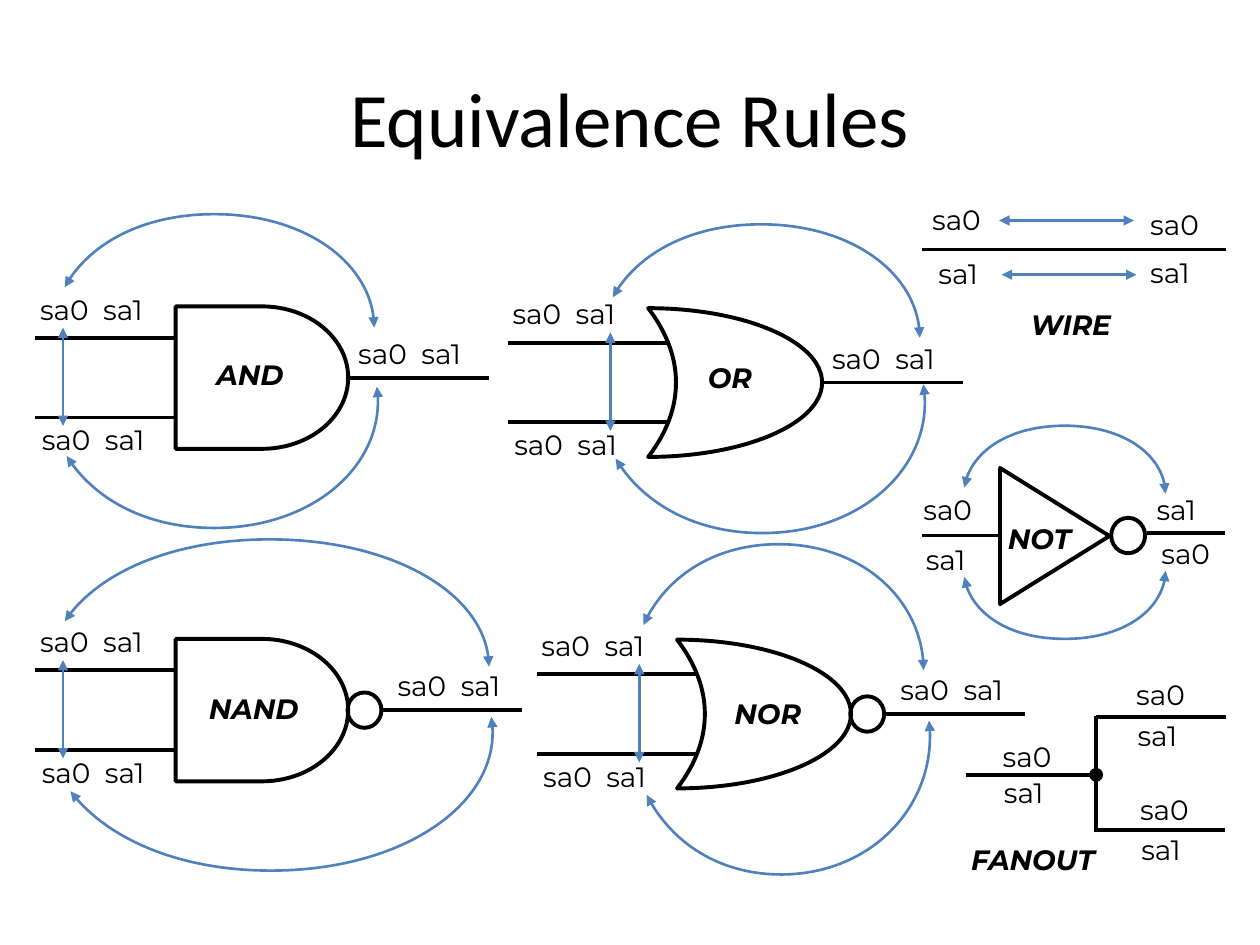
from dataclasses import dataclass
from math import asin, cos, pi, sin, tan

from lxml import etree
from pptx import Presentation
from pptx.dml.color import RGBColor
from pptx.enum.shapes import MSO_CONNECTOR, MSO_SHAPE
from pptx.enum.text import MSO_ANCHOR, MSO_AUTO_SIZE, PP_ALIGN
from pptx.oxml.ns import qn
from pptx.util import Pt

STRAIGHT = MSO_CONNECTOR.STRAIGHT
DELAY = MSO_SHAPE.FLOWCHART_DELAY
MOON = MSO_SHAPE.MOON
OVAL = MSO_SHAPE.OVAL
TRIANGLE = MSO_SHAPE.ISOSCELES_TRIANGLE
LEFT = PP_ALIGN.LEFT
CENTER = PP_ALIGN.CENTER
MIDDLE = MSO_ANCHOR.MIDDLE
TOP = MSO_ANCHOR.TOP
GROW = MSO_AUTO_SIZE.SHAPE_TO_FIT_TEXT
FIXED = MSO_AUTO_SIZE.NONE


@dataclass(frozen=True)
class Theme:
    ink: RGBColor = RGBColor(0, 0, 0)
    accent: RGBColor = RGBColor(0x4F, 0x81, 0xBD)
    title_font: str = "Calibri"
    label_font: str = "Montserrat"
    title_size: float = 44
    label_size: float = 16
    wire_width: float = 2.25
    arrow_width: float = 1.5
    dot_width: float = 0.75


theme = Theme()
deck = Presentation()
deck.slide_width, deck.slide_height = Pt(720), Pt(540)
page = deck.slides.add_slide(deck.slide_layouts[6])


def add_text(text, left, top, width, height=26.6, *, font=theme.label_font,
             size=theme.label_size, bold=False, align=LEFT, anchor=TOP,
             wrap=False, fit=GROW):
    box = page.shapes.add_textbox(Pt(left), Pt(top), Pt(width), Pt(height))
    frame = box.text_frame
    frame.word_wrap = wrap
    frame.auto_size = fit
    frame.vertical_anchor = anchor
    para = frame.paragraphs[0]
    para.alignment = align
    span = para.add_run()
    span.text = text
    span.font.name = font
    span.font.size = Pt(size)
    span.font.bold = span.font.italic = bold
    span.font.color.rgb = theme.ink


def style_outline(shape, color, width, arrows=False):
    shape.line.color.rgb = color
    shape.line.width = Pt(width)
    properties = shape._element.spPr
    if arrows:
        for end in ("a:headEnd", "a:tailEnd"):
            etree.SubElement(properties.find(qn("a:ln")), qn(end), type="triangle")
    etree.SubElement(properties, qn("a:effectLst"))


add_text("Equivalence Rules", 36, 21.6, 648, 90, font=theme.title_font,
         size=theme.title_size, align=CENTER, anchor=MIDDLE, wrap=True, fit=FIXED)

bubble_width, bubble_height = 19.4, 20.2
wires = [
    (527, 142.6, 700.6, 142.6),
    (655.2, 304.6, 699.8, 304.6),
    (527, 306, 571, 306),
    (552.2, 442.8, 626.4, 442.8),
    (626.4, 409.7, 700.6, 409.7),
    (625.7, 474.5, 699.8, 474.5),
    (626.4, 409, 626.4, 475.2),
]
arrows = [(571, 126, 648, 126), (572.4, 157, 649.4, 157)]
bodies = [(TRIANGLE, 563.8, 275, 77.8, 62.6)]
bubbles = [(635, 295.9)]

gates = [
    (DELAY, 20.2, 193, False),
    (DELAY, 20.2, 383, True),
    (MOON, 290.2, 195.8, False),
    (MOON, 306.7, 385.2, True),
]
for preset, left, top, inverted in gates:
    if preset == DELAY:
        body_width, body_height, input_length, arrow_offset = 98.6, 81.4, 80.6, 15.8
    else:
        body_width, body_height, input_length, arrow_offset = 99.4, 85, 91.6, 58.6
    second, middle = top + 45.6, top + 22.8
    body_left = left + 80.2
    output = body_left + body_width
    bodies.append((preset, body_left, middle - body_height / 2, body_width, body_height))
    output_label = output - 1.4
    if inverted:
        bubbles.append((output - 0.4, middle - bubble_height / 2))
        output += bubble_width - 0.4
        output_label = output + 2.1
    wires += [
        (left, top, left + input_length, top),
        (left, second, left + input_length, second),
        (output, middle, output + 80.4, middle),
    ]
    arrows.append((left + arrow_offset, top - 5.8, left + arrow_offset, top + 50.4))
    for label_left, label_top in [
        (left - 4.4, top - 29.6),
        (left - 3.4, second - 0.6),
        (output_label, top - 4.4),
    ]:
        add_text("sa0  sa1", label_left, label_top, 87.1)

for lines, color, width, pointed in [
    (wires, theme.ink, theme.wire_width, False),
    (arrows, theme.accent, theme.arrow_width, True),
]:
    for ends in lines:
        line = page.shapes.add_connector(STRAIGHT, *map(Pt, ends))
        style_outline(line, color, width, pointed)

bodies += [(OVAL, *corner, bubble_width, bubble_height) for corner in bubbles]
for preset, *bounds in bodies:
    body = page.shapes.add_shape(preset, *map(Pt, bounds))
    body.fill.background()
    style_outline(body, theme.ink, theme.wire_width)
    if preset == MOON:
        body.adjustments[0] = 0.84
        body._element.spPr.find(qn("a:xfrm")).set("flipH", "1")
    if preset == TRIANGLE:
        body.rotation = 90

junction = page.shapes.add_shape(OVAL, Pt(622.8), Pt(439.2), Pt(7.2), Pt(7.2))
junction.fill.solid()
junction.fill.fore_color.rgb = theme.ink
style_outline(junction, theme.ink, theme.dot_width)

arcs = [
    (122.4, 187.2, 91.4, 64.8, 164.2, 187.2),
    (122.4, 229, 93.6, -72.7, 260.6, 221),
    (154.1, 380.9, 125.3, 72.7, 355, 380.9),
    (154.8, 418.3, 126.7, -79.2, 452.2, 409.7),
    (434.9, 193, 90.7, 64.8, 169.9, 193),
    (435.6, 229.7, 92.9, -74.9, 262.1, 219.6),
    (445, 383, 82.8, 72, 357.1, 383),
    (446.4, 420.5, 85, -79.2, 454.3, 411.8),
    (608.4, 282.2, 57.6, 38.9, 278.6, 282.2),
    (608.4, 326.2, 57.6, -38.9, 329.8, 326.2),
]
for center_x, center_y, radius_x, radius_y, start_y, end_y in arcs:
    start = pi - asin((center_y - start_y) / radius_y)
    end = asin((center_y - end_y) / radius_y)
    unit_points = [(cos(start), sin(start))]
    for begin, finish in [(start, pi / 2), (pi / 2, end)]:
        reach = 4 / 3 * tan((finish - begin) / 4)
        unit_points += [
            (cos(begin) - reach * sin(begin), sin(begin) + reach * cos(begin)),
            (cos(finish) + reach * sin(finish), sin(finish) - reach * cos(finish)),
            (cos(finish), sin(finish)),
        ]
    points = [(Pt(center_x + radius_x * x), Pt(center_y - radius_y * y))
              for x, y in unit_points]
    builder = page.shapes.build_freeform(*points[0])
    builder.add_line_segments(points[1:], close=False)
    arc = builder.convert_to_shape()
    segments = list(arc._element.iter(qn("a:lnTo")))
    for first in range(0, len(segments), 3):
        curve = etree.SubElement(segments[first].getparent(), qn("a:cubicBezTo"))
        for segment in segments[first:first + 3]:
            curve.append(segment[0])
            segment.getparent().remove(segment)
    arc.fill.background()
    style_outline(arc, theme.accent, theme.arrow_width, True)

for text, left, top in [
    ("sa0", 525.6, 112.3), ("sa1", 529.2, 143.3),
    ("sa0", 650.2, 115.2), ("sa1", 650.2, 142.6),
    ("sa0", 520.6, 277.9), ("sa1", 522, 306.7),
    ("sa1", 653.8, 277.9), ("sa0", 656.6, 303.1),
    ("sa0", 565.9, 419), ("sa1", 566.6, 439.9),
    ("sa0", 642.2, 383.8), ("sa1", 643, 406.8),
    ("sa0", 644.4, 449.3), ("sa1", 645.1, 472.3),
]:
    add_text(text, left, top, 45.4)

for name, left, top, width in [
    ("AND", 116.6, 200.9, 58.3),
    ("NAND", 112.3, 391.7, 71.3),
    ("OR", 397.4, 202.3, 46.1),
    ("NOR", 412.6, 394.6, 59),
    ("WIRE", 581.8, 172.1, 66.2),
    ("NOT", 568.8, 294.5, 58.3),
    ("FANOUT", 547.9, 478.1, 95),
]:
    add_text(name, left, top, width, bold=True)

deck.save("out.pptx")
